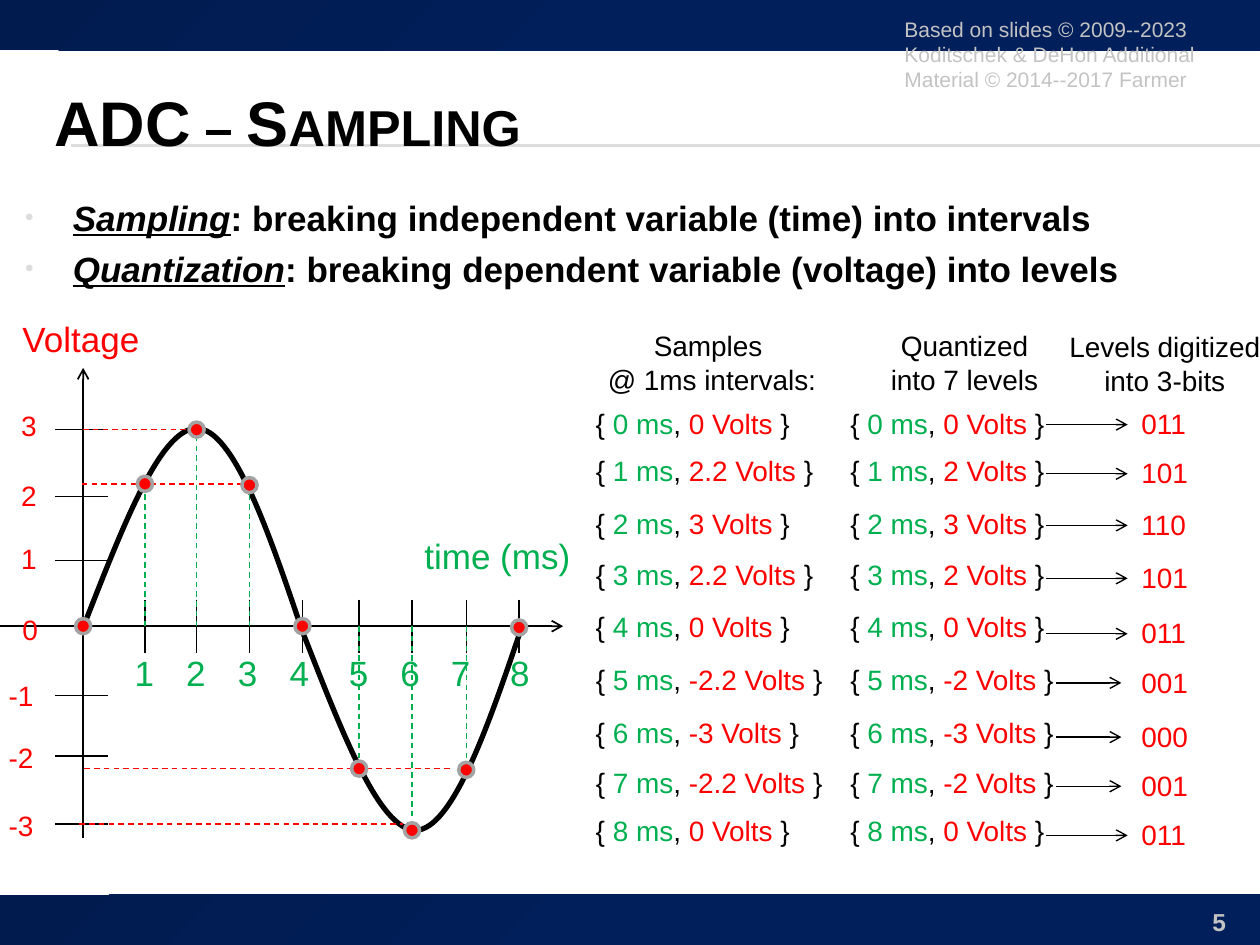
from dataclasses import dataclass

from pptx import Presentation
from pptx.dml.color import RGBColor
from pptx.enum.dml import MSO_LINE
from pptx.enum.shapes import MSO_CONNECTOR, MSO_SHAPE
from pptx.enum.text import MSO_ANCHOR, MSO_AUTO_SIZE, PP_ALIGN
from pptx.oxml.ns import qn
from pptx.oxml.xmlchemy import OxmlElement
from pptx.util import Pt

PX = 9144  # EMU per px, 100 px to the inch


@dataclass(frozen=True)
class Theme:
    font: str = "Arial"
    ink: str = "000000"
    volt: str = "FF0000"
    time: str = "00B050"
    rule: str = "DDDDDD"
    muted: str = "C3C3C3"
    ring: str = "A3A3A3"
    band_dark: str = "011B4E"
    band: str = "011F5B"
    title: int = 36
    body: int = 20
    small: int = 16
    number: int = 14
    credit: int = 12
    thin: float = 0.79


T = Theme()

# Samples from the axis origin: x, y, left of the time label
SAMPLES = [(0, 0, None), (49, -113, 31), (90, -156, 72), (132, -112, 113), (174, 0, 154),
           (219, 113, 201), (261, 162, 242), (304, 114, 282), (346, 1, 329)]
# Voltage labels: text, tick y, label left, label top
VOLTAGES = [("3", -156, -59, -178), ("2", -103, -59, -122), ("1", -52, -59, -72),
            ("0", None, -58, -16), ("-1", 55, -69, 37), ("-2", 103, -69, 86),
            ("-3", 157, -69, 140)]
# Dashed voltage guides: y, from x, to x
GUIDES = [(-113, -1, 130), (-156, 0, 88), (157, -3, 254), (113, 1, 293)]
# Bezier points of the sine wave, three to a segment
WAVE = [(31, -78), (61, -157), (90, -157), (119, -157), (147, -76), (174, 4),
        (205, 83), (235, 162), (264, 162), (293, 161), (321, 81), (348, 1)]
# Conversion rows: top, sampled, quantized, top of bits, bits
ROWS = [(62, "0", "0", 62, "011"), (99, "2.2", "2", 101, "101"), (141, "3", "3", 142, "110"),
        (182, "2.2", "2", 184, "101"), (223, "0", "0", 228, "011"),
        (265, "-2.2", "-2", 267, "001"), (307, "-3", "-3", 310, "000"),
        (347, "-2.2", "-2", 349, "001"), (385, "0", "0", 388, "011")]


def rgb(color):
    return RGBColor.from_string(color)


def make_element(tag, **attributes):
    element = OxmlElement(tag)
    for name, value in attributes.items():
        element.set(name, value)
    return element


def style(run, size, color, bold=False, italic=False, underline=False):
    font = run.font
    font.name, font.size, font.color.rgb = T.font, Pt(size), rgb(color)
    font.bold, font.italic, font.underline = bold, italic, underline


def add_runs(paragraph, parts, size, **extra):
    for words, color in parts:
        run = paragraph.add_run()
        run.text = words
        style(run, size, color, **extra)


def add_text(slide, x, y, w, h, lines, size, color=T.ink, align=PP_ALIGN.LEFT,
             wrap=False, bold=False):
    """Each line is a string, or a list of (words, color) parts."""
    frame = slide.shapes.add_textbox(x * PX, y * PX, w * PX, h * PX).text_frame
    frame.word_wrap = wrap
    frame.auto_size = MSO_AUTO_SIZE.NONE if wrap else MSO_AUTO_SIZE.SHAPE_TO_FIT_TEXT
    for i, line in enumerate(lines):
        paragraph = frame.add_paragraph() if i else frame.paragraphs[0]
        paragraph.alignment = align
        parts = [(line, color)] if isinstance(line, str) else line
        add_runs(paragraph, parts, size, bold=bold)


def add_line(slide, x1, y1, x2, y2, color=T.ink, width=T.thin, dash=False, arrow=False):
    line = slide.shapes.add_connector(MSO_CONNECTOR.STRAIGHT, x1 * PX, y1 * PX, x2 * PX, y2 * PX)
    line.line.color.rgb, line.line.width = rgb(color), Pt(width)
    if dash:
        line.line.dash_style = MSO_LINE.DASH
    properties = line.element.find(qn("p:spPr"))
    if arrow:
        properties.find(qn("a:ln")).append(make_element("a:tailEnd", type="arrow"))
    properties.append(make_element("a:effectLst"))


def add_frame(slide, w, h):
    # Rule under the title
    for y in (115, 116):
        add_line(slide, 56, y, w, y, T.rule, 0.75)
    # Bands at the top and bottom
    for y in (0, h - 40):
        band = slide.shapes.add_shape(MSO_SHAPE.RECTANGLE, 0, y * PX, w * PX, 40 * PX)
        band.shadow.inherit = False
        band.line.fill.background()
        band.fill.gradient()
        band.fill.gradient_angle = 315
        for stop, color, position in zip(band.fill.gradient_stops, (T.band_dark, T.band), (0, 0.5)):
            stop.color.rgb, stop.position = rgb(color), position
    # Slide number and credit
    add_text(slide, w - 100, h - 35, 83, 27, ["5"], T.number, T.muted, PP_ALIGN.RIGHT, True, True)
    add_text(slide, w - 292, 8, 275, 32,
             ["Based on slides © 2009--2023 Koditschek & DeHon Additional "
              "Material © 2014--2017 Farmer"], T.credit, T.muted, wrap=True)


def add_title(slide, x, y, w, h):
    title = slide.shapes.title
    title.left, title.top, title.width, title.height = x * PX, y * PX, w * PX, h * PX
    frame = title.text_frame
    frame.text = "ADC – Sampling"
    frame.vertical_anchor = MSO_ANCHOR.MIDDLE
    paragraph = frame.paragraphs[0]
    paragraph.alignment = PP_ALIGN.LEFT
    run = paragraph.runs[0]
    style(run, T.title, T.ink, bold=True)
    run._r.get_or_add_rPr().set("cap", "small")
    # Bring the title in front of its rule
    title.element.getparent().append(title.element)


def add_definitions(slide, x, y, w, h):
    frame = slide.shapes.add_textbox(x * PX, y * PX, w * PX, h * PX).text_frame
    frame.word_wrap = True
    definitions = [("Sampling", ": breaking independent variable (time) into intervals"),
                   ("Quantization", ": breaking dependent variable (voltage) into levels")]
    for i, (term, meaning) in enumerate(definitions):
        paragraph = frame.add_paragraph() if i else frame.paragraphs[0]
        paragraph.space_before = Pt(5)
        add_runs(paragraph, [(term, T.ink)], T.body, bold=True, italic=True, underline=True)
        add_runs(paragraph, [(meaning, T.ink)], T.body, bold=True)
        # Hanging bullet
        properties = paragraph._p.get_or_add_pPr()
        properties.set("marL", str(38 * PX))
        properties.set("indent", str(-38 * PX))
        bullet_color = make_element("a:buClr")
        bullet_color.append(make_element("a:srgbClr", val=T.rule))
        properties.extend([bullet_color, make_element("a:buSzPct", val="70000"),
                           make_element("a:buFont", typeface=T.font),
                           make_element("a:buChar", char="•")])


def add_wave(slide, ox, oy):
    builder = slide.shapes.build_freeform(ox, oy + 1, scale=PX)
    builder.add_line_segments([(ox + x, oy + y) for x, y in WAVE], close=False)
    wave = builder.convert_to_shape()
    wave.shadow.inherit = False
    wave.fill.background()
    wave.line.color.rgb, wave.line.width = rgb(T.ink), Pt(3)
    # Join each three straight steps into one curve
    steps = list(wave.element.iter(qn("a:lnTo")))
    for first in range(0, len(steps), 3):
        curve = make_element("a:cubicBezTo")
        steps[first].addprevious(curve)
        for step in steps[first:first + 3]:
            curve.append(step[0])
            step.getparent().remove(step)


def add_graph(slide, x, y, w, h):
    ox, oy = x, y + 205
    # Axes and their names
    add_line(slide, ox - 105, oy, ox + w, oy, width=1, arrow=True)
    add_line(slide, ox, y + h, ox, y, width=1, arrow=True)
    add_text(slide, ox + 261, oy - 78, 137, 44, ["time (ms)"], T.body, T.time)
    add_text(slide, ox - 58, y - 45, 114, 44, ["Voltage"], T.body, T.volt)
    add_wave(slide, ox, oy)
    # Voltage scale
    for label, tick, left, top in VOLTAGES:
        if tick is not None:
            add_line(slide, ox - 22, oy + tick, ox + 20, oy + tick)
        add_text(slide, ox + left, oy + top, 40 if "-" in label else 33, 37, [label],
                 T.small, T.volt)
    for dy, start, end in GUIDES:
        add_line(slide, ox + start, oy + dy, ox + end, oy + dy, T.volt, dash=True)
    # Time scale, drop lines and sample points
    for ms, (dx, dy, label_left) in enumerate(SAMPLES):
        if ms:
            add_line(slide, ox + dx, oy - 21, ox + dx, oy + 21)
            add_text(slide, ox + label_left, oy + 15, 36, 44, [str(ms)], T.body, T.time)
        if abs(dy) > 1:
            add_line(slide, ox + dx, oy, ox + dx, oy + dy, T.time, dash=True)
        dot = slide.shapes.add_shape(MSO_SHAPE.OVAL, (ox + dx - 6) * PX, (oy + dy - 6) * PX,
                                     12 * PX, 12 * PX)
        dot.shadow.inherit = False
        dot.fill.solid()
        dot.fill.fore_color.rgb = rgb(T.volt)
        dot.line.color.rgb, dot.line.width = rgb(T.ring), Pt(2)


def add_pair(slide, x, y, ms, volts):
    parts = [("{ ", T.ink), (f"{ms} ms", T.time), (", ", T.ink),
             (f"{volts} Volts", T.volt), (" }", T.ink)]
    width = 177 + 18 * ("." in volts) + 7 * ("-" in volts)
    add_text(slide, x, y, width, 37, [parts], T.small)


def add_conversion(slide, x, y):
    # Column headings
    for dx, dy, w, lines in ((2, 0, 194, ["Samples", " @ 1ms intervals:"]),
                             (233, 0, 139, ["Quantized", "into 7 levels"]),
                             (375, 1, 173, ["Levels digitized", "into 3-bits"])):
        add_text(slide, x + dx, y + dy, w, 64, lines, T.small, align=PP_ALIGN.CENTER)
    # Sample, quantized level, arrow and bits
    for ms, (top, sampled, quantized, bits_top, bits) in enumerate(ROWS):
        add_pair(slide, x, y + top, ms, sampled)
        add_pair(slide, x + 202, y + top, ms, quantized)
        start, end = (375, 427) if "-" in quantized else (367, 432)
        add_line(slide, x + start, y + bits_top + 19, x + end, y + bits_top + 19, arrow=True)
        add_text(slide, x + 433, y + bits_top, 58, 37, [bits], T.small, T.volt)


def main():
    deck = Presentation()
    deck.slide_width, deck.slide_height = 1000 * PX, 750 * PX
    slide = deck.slides.add_slide(deck.slide_layouts[5])
    add_frame(slide, 1000, 750)
    add_title(slide, 33, 50, 950, 92)
    add_definitions(slide, 10, 151, 1055, 530)
    add_graph(slide, 66, 292, 381, 373)
    add_conversion(slide, 463, 256)
    deck.save("out.pptx")


if __name__ == "__main__":
    main()
